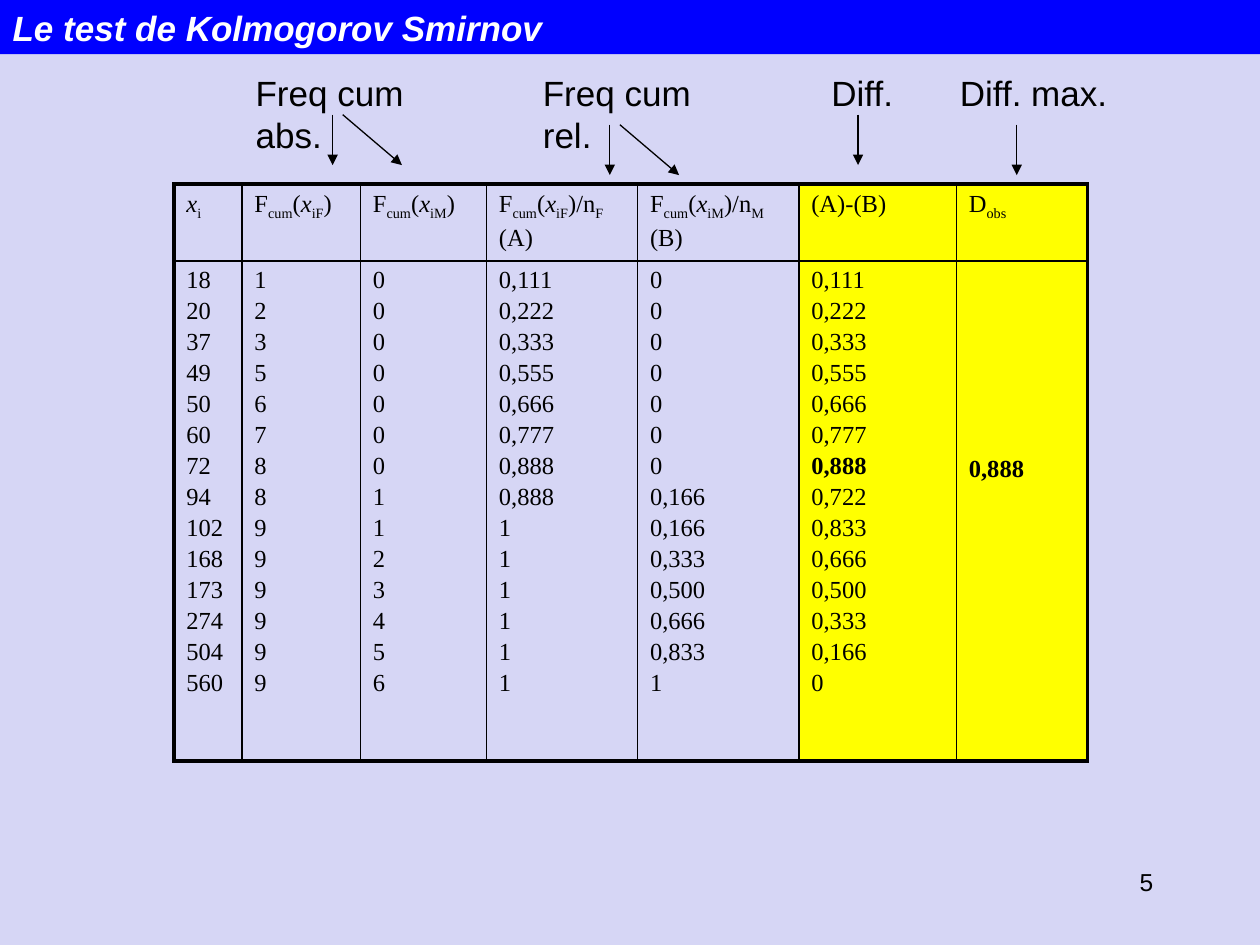
from dataclasses import dataclass

from lxml import etree
from pptx import Presentation
from pptx.dml.color import RGBColor
from pptx.enum import shapes, text
from pptx.oxml import ns
from pptx.util import Inches, Pt


@dataclass(frozen=True)
class Theme:
    background: str = "D6D6F5"
    bar: str = "0000FF"
    highlight: str = "FFFF00"
    ink: str = "000000"
    white: str = "FFFFFF"
    sans: str = "Arial"
    serif: str = "Times New Roman"
    heading_size: int = 20
    body_size: int = 14
    outer_border: float = 2.25
    inner_border: float = 1
    arrow_width: float = 0.75


THEME = Theme()

# Content
TITLE = "Le test de Kolmogorov Smirnov"
PAGE_NUMBER = "5"


def cumulative(group, *ending):
    """Runs of a cumulative frequency; a style is 'i' (italic) or 's' (subscript)."""
    return [("F", ""), ("cum", "s"), ("(", ""), ("x", "i"), ("i" + group, "s"), *ending]


HEADERS = [
    [[("x", "i"), ("i", "s")]],
    [cumulative("F", (")", ""))],
    [cumulative("M", (")", ""))],
    [cumulative("F", (")/n", ""), ("F", "s")), "(A)"],
    [cumulative("M", (")/n", ""), ("M", "s")), "(B)"],
    ["(A)-(B)"],
    [[("D", ""), ("obs", "s")]],
]
COLUMNS = [
    "18 20 37 49 50 60 72 94 102 168 173 274 504 560".split(),
    "1 2 3 5 6 7 8 8 9 9 9 9 9 9".split(),
    "0 0 0 0 0 0 0 1 1 2 3 4 5 6".split(),
    "0,111 0,222 0,333 0,555 0,666 0,777 0,888 0,888 1 1 1 1 1 1".split(),
    "0 0 0 0 0 0 0 0,166 0,166 0,333 0,500 0,666 0,833 1".split(),
    "0,111 0,222 0,333 0,555 0,666 0,777 0,888 0,722 0,833 0,666 0,500 0,333 0,166 0".split(),
]
MAX_ROW = 6
COLUMNS[5][MAX_ROW] = [("0,888", "b")]
COLUMNS.append([[("0,888", "b")]])
HIGHLIGHTED = (5, 6)

# Table geometry, in inches
TABLE_LEFT, TABLE_TOP = 1.38, 1.46
COLUMN_WIDTHS = [0.54, 0.94, 1, 1.2, 1.28, 1.25, 1.04]
ROW_HEIGHTS = [0.61, 3.97]
LINE_PITCH = 0.25
LINE_GAP = 2.2  # points

# Label, left, width, arrow start x, arrow start y, has a second slanted arrow
LABELS = [
    ("Freq cum abs.", 1.93, 1.95, 2.64, 0.91, True),
    ("Freq cum rel.", 4.21, 1.82, 4.84, 0.99, True),
    ("Diff.", 6.5, 0.75, 6.81, 0.91, False),
    ("Diff. max.", 7.52, 1.4, 8.07, 0.99, False),
]
LABEL_TOP, LABEL_HEIGHT, ARROW_DROP = 0.52, 0.43, 0.4
SLANT_OFFSET, SLANT_RUN = 0.08, 0.47


def rgb(value):
    return RGBColor.from_string(value)


def write(frame, lines, *, font=THEME.sans, size=THEME.heading_size, color=THEME.ink,
          bold=False, italic=False, align=text.PP_ALIGN.LEFT, gap=0):
    """Write one paragraph per line; a line is a string or a list of styled runs."""
    frame.word_wrap = True
    for index, line in enumerate(lines):
        paragraph = frame.add_paragraph() if index else frame.paragraphs[0]
        paragraph.alignment = align
        paragraph.space_before = Pt(gap)
        for content, style in [(line, "")] if isinstance(line, str) else line:
            run = paragraph.add_run()
            run.text = content
            run.font.name, run.font.size = font, Pt(size)
            run.font.color.rgb = rgb(color)
            run.font.bold = bold or style == "b"
            run.font.italic = italic or style == "i"
            if style == "s":
                run._r.get_or_add_rPr().set("baseline", "-25000")


def add_label(slide, content, left, top, width, height, **style):
    box = slide.shapes.add_textbox(Inches(left), Inches(top), Inches(width), Inches(height))
    write(box.text_frame, [content], **style)


def add_arrow(slide, x1, y1, x2, y2):
    arrow = slide.shapes.add_connector(
        shapes.MSO_CONNECTOR.STRAIGHT, Inches(x1), Inches(y1), Inches(x2), Inches(y2))
    arrow.line.color.rgb = rgb(THEME.ink)
    arrow.line.width = Pt(THEME.arrow_width)
    etree.SubElement(arrow.get_or_add_ln(), ns.qn("a:tailEnd"), type="triangle")
    etree.SubElement(arrow._element.spPr, ns.qn("a:effectLst"))


def set_borders(cell, widths):
    properties = cell._tc.get_or_add_tcPr()
    for index, (side, width) in enumerate(zip("LRTB", widths)):
        line = etree.Element(ns.qn("a:ln" + side), w=str(int(Pt(width))))
        fill = etree.SubElement(line, ns.qn("a:solidFill"))
        etree.SubElement(fill, ns.qn("a:srgbClr"), val=THEME.ink)
        properties.insert(index, line)


def add_frequency_table(slide):
    last_row, last_column = len(ROW_HEIGHTS) - 1, len(COLUMN_WIDTHS) - 1
    table = slide.shapes.add_table(
        len(ROW_HEIGHTS), len(COLUMN_WIDTHS), Inches(TABLE_LEFT), Inches(TABLE_TOP),
        Inches(sum(COLUMN_WIDTHS)), Inches(sum(ROW_HEIGHTS))).table
    table.first_row = table.horz_banding = False
    for column, width in zip(table.columns, COLUMN_WIDTHS):
        column.width = Inches(width)
    for row, height in zip(table.rows, ROW_HEIGHTS):
        row.height = Inches(height)

    for r, contents in enumerate((HEADERS, COLUMNS)):
        for c, lines in enumerate(contents):
            cell = table.cell(r, c)
            write(cell.text_frame, lines, font=THEME.serif, size=THEME.body_size, gap=LINE_GAP)
            if c in HIGHLIGHTED:
                cell.fill.solid()
                cell.fill.fore_color.rgb = rgb(THEME.highlight)
            else:
                cell.fill.background()
            on_edge = (c == 0, c == last_column, r == 0, r == last_row)
            set_borders(cell, [THEME.outer_border if edge else THEME.inner_border
                               for edge in on_edge])
    # Level the observed maximum with its row of differences
    table.cell(last_row, last_column).margin_top = Inches(0.05 + MAX_ROW * LINE_PITCH)


def main():
    presentation = Presentation()
    presentation.slide_width, presentation.slide_height = Inches(10), Inches(7.5)
    slide = presentation.slides.add_slide(presentation.slide_layouts[5])
    slide.background.fill.solid()
    slide.background.fill.fore_color.rgb = rgb(THEME.background)

    # Title bar
    title = slide.shapes.title
    title.left, title.top = Inches(0), Inches(0)
    title.width, title.height = Inches(10), Inches(0.43)
    title.fill.solid()
    title.fill.fore_color.rgb = rgb(THEME.bar)
    title.text_frame.auto_size = text.MSO_AUTO_SIZE.NONE
    title.text_frame.vertical_anchor = text.MSO_ANCHOR.MIDDLE
    write(title.text_frame, [TITLE], color=THEME.white, bold=True, italic=True)

    # Table, then the labels pointing at its columns
    add_frequency_table(slide)
    for label, left, width, x, y, slanted in LABELS:
        add_label(slide, label, left, LABEL_TOP, width, LABEL_HEIGHT)
        add_arrow(slide, x, y, x, y + ARROW_DROP)
        if slanted:
            start = x + SLANT_OFFSET
            add_arrow(slide, start, y, start + SLANT_RUN, y + ARROW_DROP)

    # Page number
    add_label(slide, PAGE_NUMBER, 7.17, 6.83, 2.08, 0.5,
              size=THEME.body_size, align=text.PP_ALIGN.RIGHT)
    presentation.save("out.pptx")


if __name__ == "__main__":
    main()
